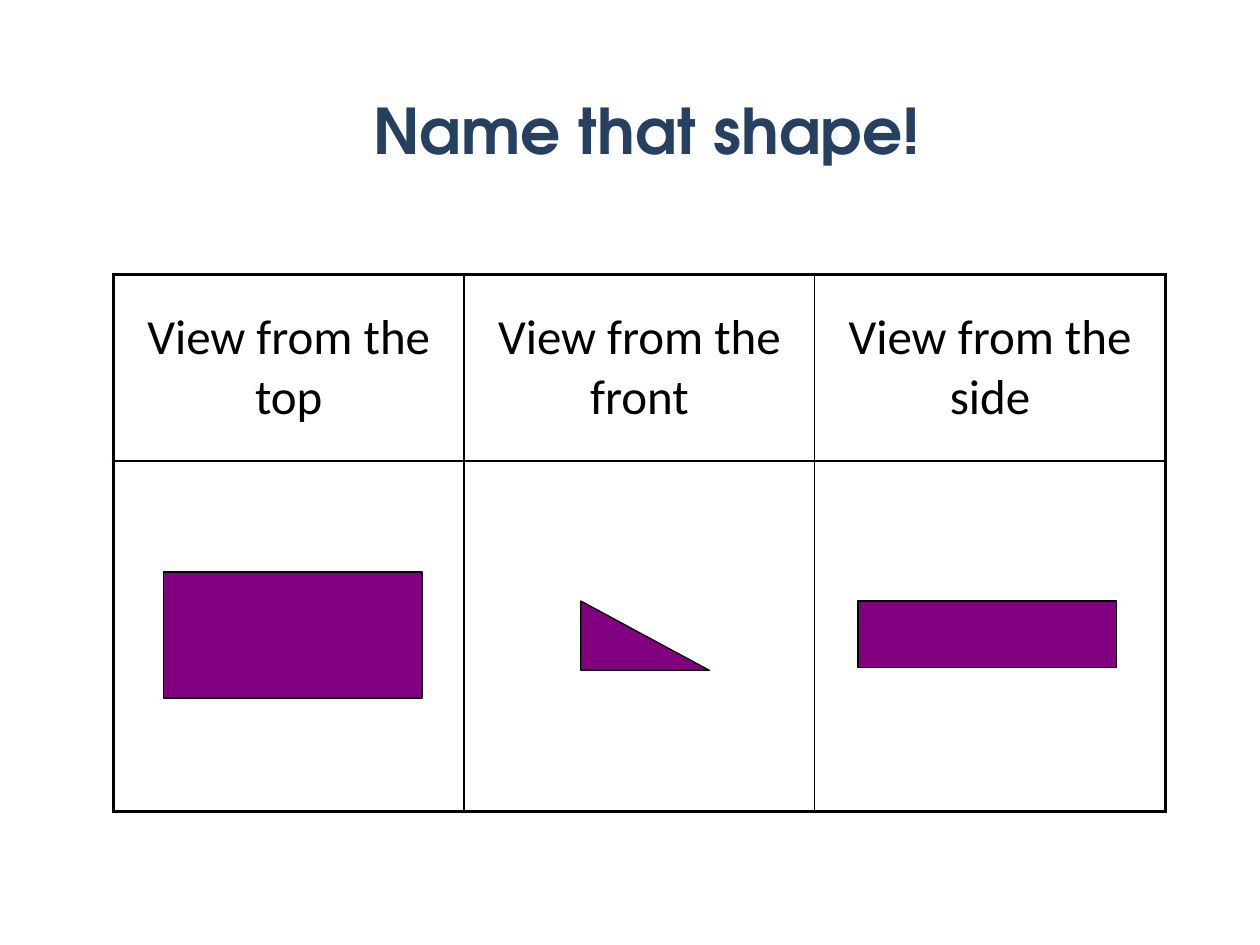
from lxml.etree import SubElement
from pptx import Presentation
from pptx.dml.color import RGBColor
from pptx.enum.shapes import MSO_SHAPE
from pptx.enum.text import MSO_ANCHOR, PP_ALIGN
from pptx.oxml.ns import qn
from pptx.util import Inches, Pt

VIEWS = ["top", "front", "side"]
HEADER_HEIGHT, DRAWING_HEIGHT = 1.48, 2.78
OUTER_BORDER, INNER_BORDER = 2.25, 1


def color(hex_value):
    """Return the colour for a hex string."""
    return RGBColor.from_string(hex_value)


def write(frame, words, hex_value, **font_format):
    """Write one centred paragraph in the given font format."""
    paragraph = frame.paragraphs[0]
    paragraph.alignment = PP_ALIGN.CENTER
    run = paragraph.add_run()
    run.text = words
    run.font.color.rgb = color(hex_value)
    for attribute, value in font_format.items():
        setattr(run.font, attribute, value)
    return paragraph


def set_borders(cell, widths):
    """Give a cell black borders, with a width in points for each side."""
    properties = cell._tc.get_or_add_tcPr()
    for side, width in widths.items():
        border = SubElement(properties, qn(f"a:ln{side}"), w=str(Pt(width)))
        fill = SubElement(border, qn("a:solidFill"))
        SubElement(fill, qn("a:srgbClr"), val="000000")


def add_title(slide, left, top, width, height):
    """Add the centred slide title."""
    title = slide.shapes.add_textbox(*map(Inches, (left, top, width, height)))
    title.text_frame.word_wrap = False
    write(title.text_frame, "Name that shape!", "254061",
          name="TeX Gyre Adventor", size=Pt(36), bold=True)


def add_view_table(slide, left, top, width):
    """Add the table with a heading over an empty cell for each view."""
    heights = [HEADER_HEIGHT, DRAWING_HEIGHT]
    box = map(Inches, (left, top, width, sum(heights)))
    table = slide.shapes.add_table(len(heights), len(VIEWS), *box).table
    table.first_row = table.horz_banding = False
    for row, height in zip(table.rows, heights):
        row.height = Inches(height)
    for column, view in enumerate(VIEWS):
        table.columns[column].width = Inches(width / len(VIEWS))
        for row in range(len(heights)):
            cell = table.cell(row, column)
            on_edge = {"L": column == 0, "R": column == len(VIEWS) - 1,
                       "T": row == 0, "B": row == len(heights) - 1}
            set_borders(cell, {side: OUTER_BORDER if edge else INNER_BORDER
                               for side, edge in on_edge.items()})
            cell.fill.background()
        heading = table.cell(0, column)
        heading.vertical_anchor = MSO_ANCHOR.MIDDLE
        paragraph = write(heading.text_frame, f"View from the {view}", "000000",
                          name="Calibri", size=Pt(28))
        paragraph.space_before = Pt(5.6)


def add_views(slide, left, top):
    """Add the three views of the solid, relative to the drawing row."""
    views = [
        (MSO_SHAPE.RECTANGLE, 0.4, 0.88, 2.05, 1),
        (MSO_SHAPE.RIGHT_TRIANGLE, 3.71, 1.11, 1.02, 0.55),
        (MSO_SHAPE.RECTANGLE, 5.91, 1.11, 2.05, 0.53),
    ]
    for outline, x, y, width, height in views:
        view = slide.shapes.add_shape(
            outline, *map(Inches, (left + x, top + y, width, height)))
        view.shadow.inherit = False
        view.fill.solid()
        view.fill.fore_color.rgb = color("800080")
        view.line.color.rgb = color("000000")
        view.line.width = Pt(0.75)


def main():
    """Build and save the slide."""
    presentation = Presentation()
    presentation.slide_width, presentation.slide_height = Inches(10), Inches(7.5)
    slide = presentation.slides.add_slide(presentation.slide_layouts[6])
    left, top = 0.9, 2.18
    add_view_table(slide, left, top, 8.35)
    add_views(slide, left, top + HEADER_HEIGHT)
    add_title(slide, 2.38, 0.68, 5.51, 0.71)
    presentation.save("out.pptx")


if __name__ == "__main__":
    main()
